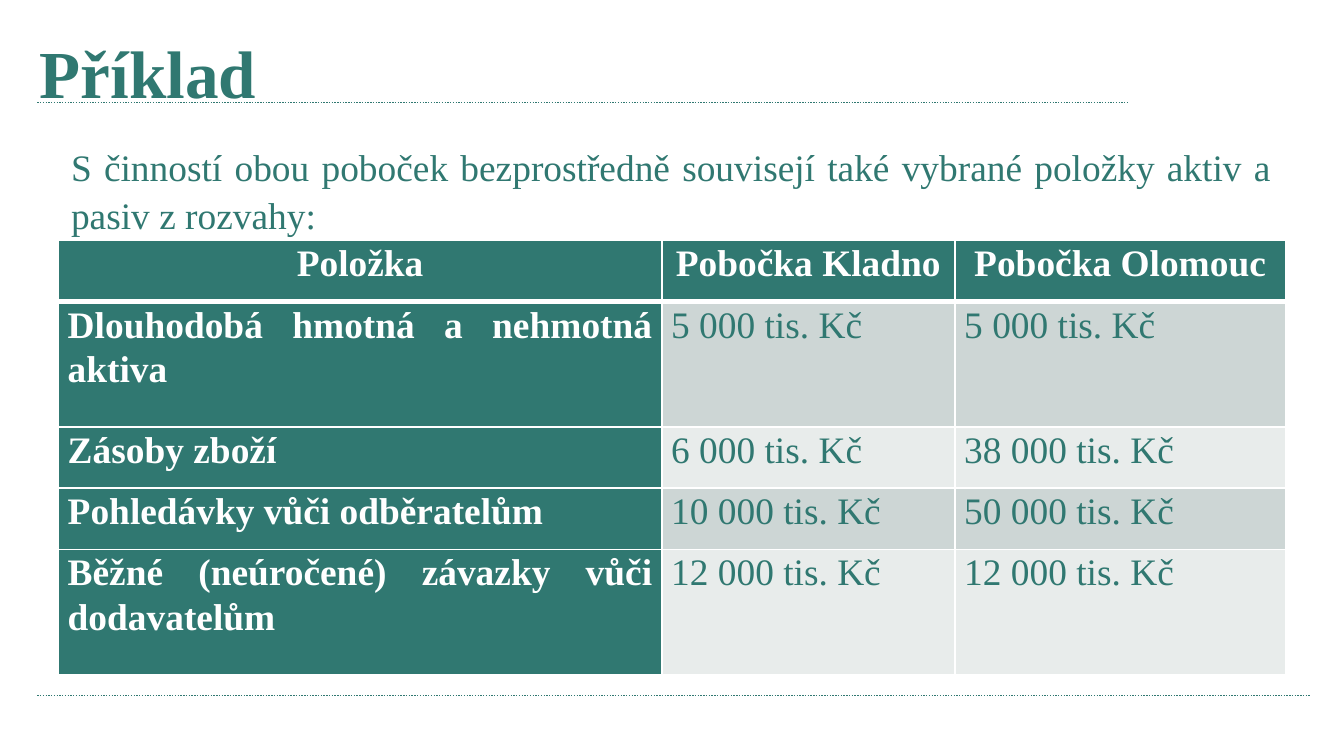
from dataclasses import dataclass

from lxml import etree
from pptx import Presentation
from pptx.dml.color import RGBColor
from pptx.enum.dml import MSO_LINE
from pptx.enum.shapes import MSO_CONNECTOR
from pptx.enum.text import MSO_ANCHOR, PP_ALIGN
from pptx.oxml.ns import qn
from pptx.util import Pt

LEFT, CENTER, JUSTIFY = PP_ALIGN.LEFT, PP_ALIGN.CENTER, PP_ALIGN.JUSTIFY
MIDDLE = MSO_ANCHOR.MIDDLE
STRAIGHT = MSO_CONNECTOR.STRAIGHT
DOTTED = MSO_LINE.ROUND_DOT
TITLE_ONLY = 5


@dataclass(frozen=True)
class Theme:
    font: str = "Times New Roman"
    green: str = "307871"
    white: str = "FFFFFF"
    bands: tuple = ("CDD6D5", "E8ECEB")
    title_size: float = 36
    text_size: float = 20
    line_spacing: float = 1.07
    rule_width: float = 0.75
    border_width: float = 1
    header_border_width: float = 3


class SlideBuilder:
    def __init__(self, page, theme):
        self.page = page
        self.theme = theme

    def style(self, para, size, color, bold=False, align=LEFT, spacing=1.0):
        para.alignment = align
        para.line_spacing = spacing
        for span in para.runs:
            span.font.name = self.theme.font
            span.font.size = Pt(size)
            span.font.bold = bold
            span.font.color.rgb = RGBColor.from_string(color)

    def title(self, text, left, top, width, height):
        box = self.page.shapes.title
        box.left, box.top, box.width, box.height = Pt(left), Pt(top), Pt(width), Pt(height)
        frame = box.text_frame
        frame.text = text
        frame.vertical_anchor = MIDDLE
        self.style(frame.paragraphs[0], self.theme.title_size, self.theme.green, bold=True)

    def text(self, text, left, top, width, height):
        box = self.page.shapes.add_textbox(Pt(left), Pt(top), Pt(width), Pt(height))
        frame = box.text_frame
        frame.word_wrap = True
        frame.text = text
        self.style(frame.paragraphs[0], self.theme.text_size, self.theme.green,
                   align=JUSTIFY, spacing=self.theme.line_spacing)

    def rule(self, left, right, y):
        rule = self.page.shapes.add_connector(STRAIGHT, Pt(left), Pt(y), Pt(right), Pt(y))
        rule.line.color.rgb = RGBColor.from_string(self.theme.green)
        rule.line.width = Pt(self.theme.rule_width)
        rule.line.dash_style = DOTTED
        etree.SubElement(rule._element.spPr, qn("a:effectLst"))

    def borders(self, cell, row):
        """Draw white cell edges, with a heavier one under the header row."""
        widths = dict.fromkeys(("lnL", "lnR", "lnT", "lnB"), self.theme.border_width)
        if row < 2:
            widths["lnT" if row else "lnB"] = self.theme.header_border_width
        properties = cell._tc.get_or_add_tcPr()
        for edge, width in widths.items():
            line = etree.SubElement(properties, qn(f"a:{edge}"), w=str(Pt(width)))
            fill = etree.SubElement(line, qn("a:solidFill"))
            etree.SubElement(fill, qn("a:srgbClr"), val=self.theme.white)

    def cell(self, cell, text, row, column):
        is_heading = row == 0 or column == 0
        cell.margin_left = cell.margin_right = Pt(5)
        cell.margin_top = cell.margin_bottom = 0
        cell.text = text
        self.style(cell.text_frame.paragraphs[0], self.theme.text_size,
                   self.theme.white if is_heading else self.theme.green,
                   bold=is_heading, align=JUSTIFY if row else CENTER,
                   spacing=self.theme.line_spacing)
        self.borders(cell, row)
        cell.fill.solid()
        fill = self.theme.green if is_heading else self.theme.bands[(row - 1) % 2]
        cell.fill.fore_color.rgb = RGBColor.from_string(fill)

    def table(self, rows, left, top, widths, heights):
        table = self.page.shapes.add_table(
            len(rows), len(widths), Pt(left), Pt(top), Pt(sum(widths)), Pt(sum(heights))).table
        for column, width in zip(table.columns, widths):
            column.width = Pt(width)
        for row, height in zip(table.rows, heights):
            row.height = Pt(height)
        for row, texts in enumerate(rows):
            for column, text in enumerate(texts):
                self.cell(table.cell(row, column), text, row, column)


BALANCE_ITEMS = [
    ("Položka", "Pobočka Kladno", "Pobočka Olomouc"),
    ("Dlouhodobá hmotná a nehmotná aktiva", "5 000 tis. Kč", "5 000 tis. Kč"),
    ("Zásoby zboží", "6 000 tis. Kč", "38 000 tis. Kč"),
    ("Pohledávky vůči odběratelům", "10 000 tis. Kč", "50 000 tis. Kč"),
    ("Běžné (neúročené) závazky vůči dodavatelům", "12 000 tis. Kč", "12 000 tis. Kč"),
]
SINGLE, TALL = 32.8, 67.1


def main():
    deck = Presentation()
    deck.slide_width, deck.slide_height = Pt(720), Pt(405)
    page = deck.slides.add_slide(deck.slide_layouts[TITLE_ONLY])
    builder = SlideBuilder(page, Theme())
    builder.rule(20, 604, 55)
    builder.rule(20, 702, 372.5)
    builder.title("Příklad", 14.2, 10, 635, 57)
    builder.text("S činností obou poboček bezprostředně souvisejí také vybrané položky "
                 "aktiv a pasiv z rozvahy:", 31, 72, 657.4, 78)
    builder.table(BALANCE_ITEMS, 31.3, 128.9, (323.3, 157, 177.1),
                  (SINGLE, TALL, SINGLE, SINGLE, TALL))
    deck.save("out.pptx")


if __name__ == "__main__":
    main()
